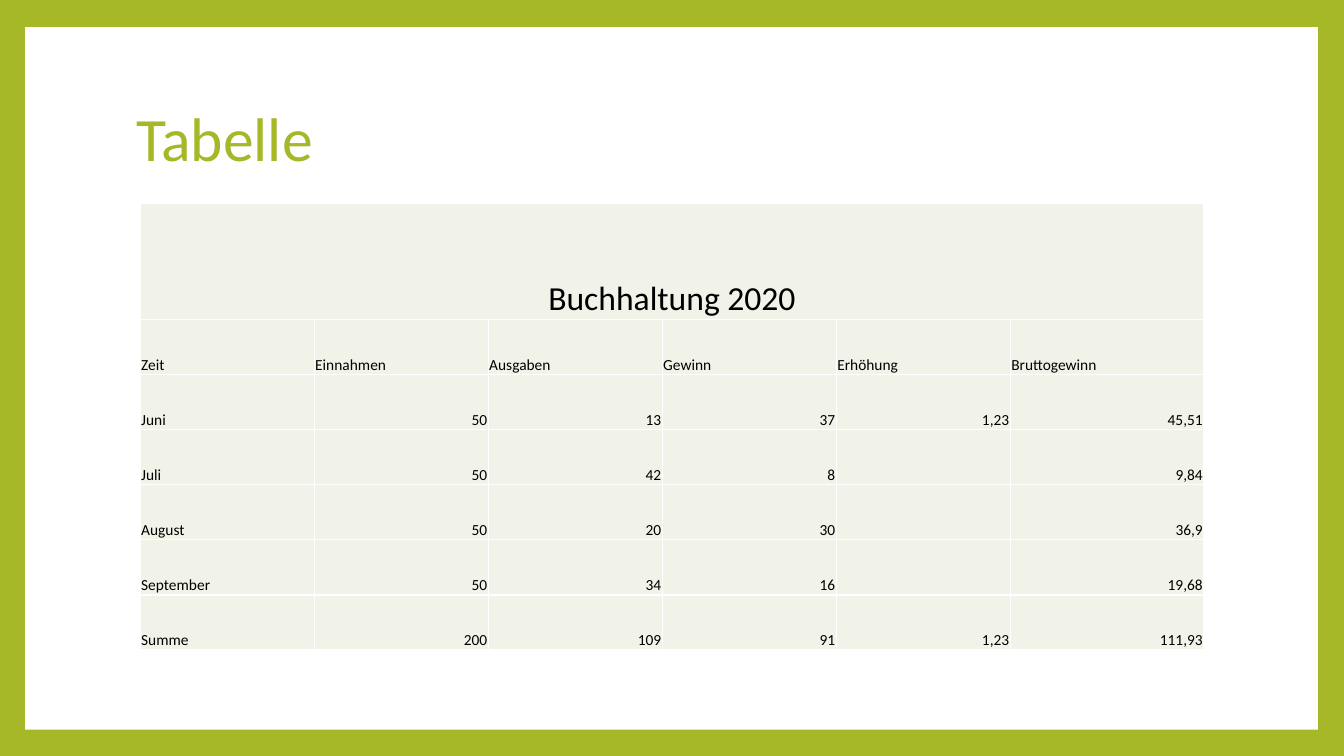
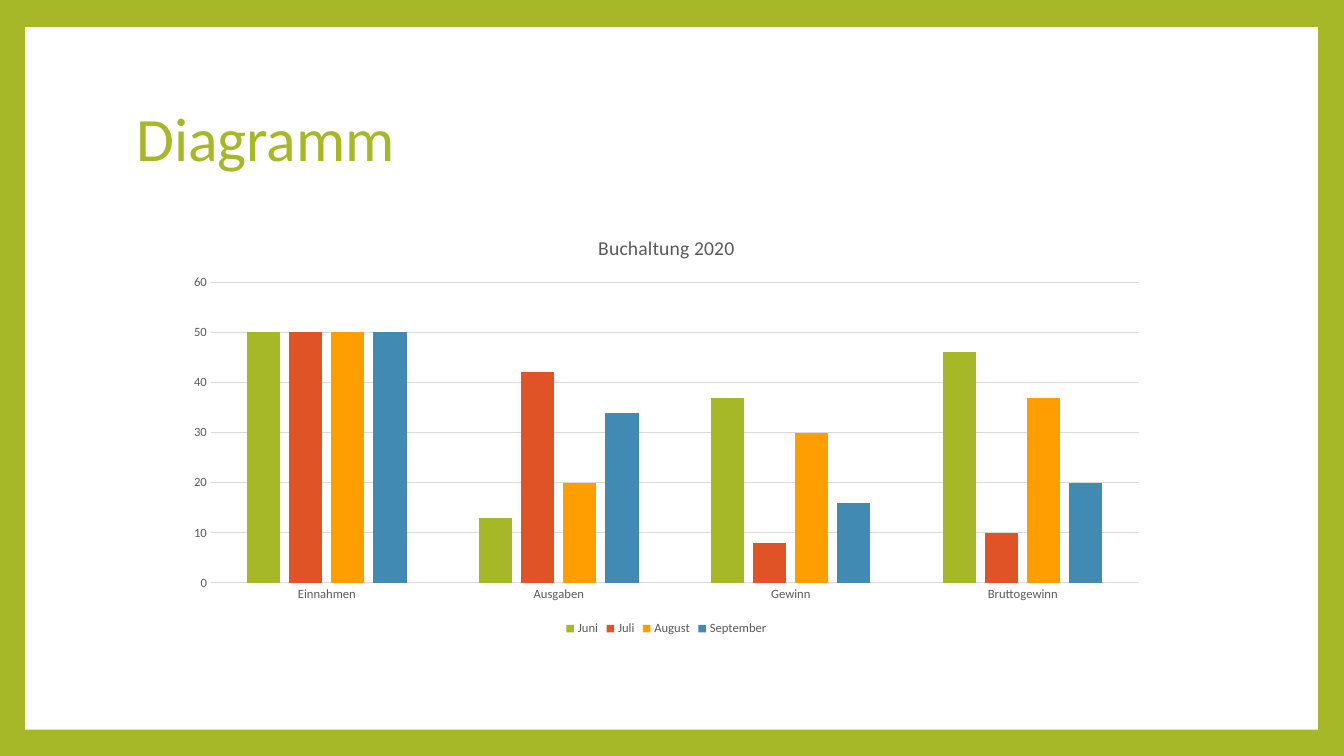
from dataclasses import dataclass
from typing import Any

from lxml import etree
from pptx import Presentation
from pptx import util as u
from pptx.chart import data as chart_data
from pptx.dml import color
from pptx.enum import chart as chart_enum
from pptx.enum import shapes, text
from pptx.oxml import ns

FONT = "Calibri"
GREEN, WHITE, BLACK = "A6B727", "FFFFFF", "000000"
CELL_FILL, GREY, GRID = "F1F3E8", "595959", "D9D9D9"
HEADING = "Buchhaltung 2020"
HEADERS = ["Zeit", "Einnahmen", "Ausgaben", "Gewinn", "Erhöhung", "Bruttogewinn"]
INCREASE = 1.23
LAST_COLUMN, FIRST_ROW = 1.92, 1.15


@dataclass(frozen=True)
class Place:
    left: float
    top: float
    width: float
    height: float

    def inches(self) -> list[u.Length]:
        return [u.Inches(v) for v in (self.left, self.top, self.width, self.height)]


@dataclass(frozen=True)
class Period:
    name: str
    income: int
    expenses: int
    color: str = ""
    shows_increase: bool = False

    @property
    def profit(self) -> int:
        return self.income - self.expenses

    @property
    def gross(self) -> float:
        return round(self.profit * INCREASE, 2)

    def row(self) -> list[str]:
        increase = german(INCREASE) if self.shows_increase else ""
        figures = [german(v) for v in (self.income, self.expenses, self.profit)]
        return [self.name, *figures, increase, german(self.gross)]


MONTHS = [
    Period("Juni", 50, 13, GREEN, True),
    Period("Juli", 50, 42, "DF5327"),
    Period("August", 50, 20, "FE9E00"),
    Period("September", 50, 34, "418AB3"),
]
TOTAL = Period(
    "Summe",
    sum(month.income for month in MONTHS),
    sum(month.expenses for month in MONTHS),
    shows_increase=True,
)
PANEL = Place(0.25, 0.27, 12.82, 6.97)
TITLE = Place(1.25, 0.66, 10.8, 1.48)
TABLE = Place(1.39, 2.02, 10.55, 4.43)
CHART = Place(1.73, 2.15, 9.76, 4.2)


def german(value: float) -> str:
    return f"{value:g}".replace(".", ",")


def rgb(value: str) -> color.RGBColor:
    return color.RGBColor.from_string(value)


def apply(target: Any, values: dict[str, Any]) -> None:
    for name, value in values.items():
        setattr(target, name, value)


def paint(fill: Any, value: str) -> None:
    fill.solid()
    fill.fore_color.rgb = rgb(value)


def style_font(font: Any, size: float, value: str) -> None:
    apply(font, {"name": FONT, "size": u.Pt(size), "bold": False})
    font.color.rgb = rgb(value)


def style_line(line: Any, value: str) -> None:
    paint(line.fill, value)
    line.width = u.Pt(0.75)


def write(frame: Any, words: str, size: float, value: str, align: Any) -> Any:
    para = frame.paragraphs[0]
    para.alignment = align
    if words:
        span = para.add_run()
        span.text = words
        style_font(span.font, size, value)
    return para


def add_panel(page: Any) -> None:
    panel = page.shapes.add_shape(shapes.MSO_SHAPE.RECTANGLE, *PANEL.inches())
    panel.shadow.inherit = False
    paint(panel.fill, WHITE)
    panel.line.fill.background()
    page.shapes.element.insert(2, panel.element)


def add_page(deck: Any, heading: str) -> Any:
    page = deck.slides.add_slide(deck.slide_layouts[5])
    paint(page.background.fill, GREEN)
    add_panel(page)
    title = page.shapes.title
    apply(title, dict(zip(("left", "top", "width", "height"), TITLE.inches())))
    frame = title.text_frame
    apply(frame, {
        "vertical_anchor": text.MSO_ANCHOR.MIDDLE,
        "auto_size": text.MSO_AUTO_SIZE.NONE,
        "word_wrap": True,
    })
    para = write(frame, heading, 44, GREEN, text.PP_ALIGN.LEFT)
    para.line_spacing = 0.9
    return page


def add_borders(table_frame: Any) -> None:
    for properties in table_frame.element.iter(ns.qn("a:tcPr")):
        for index, side in enumerate(("lnL", "lnR", "lnT", "lnB")):
            border = etree.Element(ns.qn(f"a:{side}"), w=str(u.Pt(1)))
            fill = etree.SubElement(border, ns.qn("a:solidFill"))
            etree.SubElement(fill, ns.qn("a:srgbClr"), val=WHITE)
            properties.insert(index, border)


def add_accounts_table(page: Any) -> None:
    rows = [[HEADING] + [""] * 5, HEADERS]
    rows += [period.row() for period in [*MONTHS, TOTAL]]
    table_frame = page.shapes.add_table(len(rows), len(HEADERS), *TABLE.inches())
    table = table_frame.table
    apply(table, {"first_row": False, "horz_banding": False})
    column_width = (TABLE.width - LAST_COLUMN) / (len(HEADERS) - 1)
    row_height = (TABLE.height - FIRST_ROW) / (len(rows) - 1)
    for index, column in enumerate(table.columns):
        column.width = u.Inches(LAST_COLUMN if index == 5 else column_width)
    for index, row in enumerate(table.rows):
        row.height = u.Inches(row_height if index else FIRST_ROW)
    for row_index, row in enumerate(rows):
        for column_index, words in enumerate(row):
            cell = table.cell(row_index, column_index)
            apply(cell, {
                "margin_left": u.Inches(0.01),
                "margin_right": u.Inches(0.01),
                "margin_top": u.Inches(0.01),
                "margin_bottom": 0,
                "vertical_anchor": text.MSO_ANCHOR.BOTTOM,
            })
            paint(cell.fill, CELL_FILL)
            if row_index == 0:
                align = text.PP_ALIGN.CENTER
            elif row_index > 1 and column_index:
                align = text.PP_ALIGN.RIGHT
            else:
                align = text.PP_ALIGN.LEFT
            size = 11 if row_index else 24
            write(cell.text_frame, words, size, BLACK, align)
    table.cell(0, 0).merge(table.cell(0, 5))
    add_borders(table_frame)


def add_accounts_chart(page: Any) -> None:
    figures = chart_data.CategoryChartData()
    figures.categories = [name for name in HEADERS[1:] if name != "Erhöhung"]
    for month in MONTHS:
        values = (month.income, month.expenses, month.profit, round(month.gross))
        figures.add_series(month.name, values)
    chart = page.shapes.add_chart(
        chart_enum.XL_CHART_TYPE.COLUMN_CLUSTERED, *CHART.inches(), figures
    ).chart
    style_font(chart.font, 10, BLACK)
    chart.has_title = True
    write(chart.chart_title.text_frame, "Buchaltung 2020", 14, GREY, text.PP_ALIGN.CENTER)
    chart.chart_title.include_in_layout = False

    plot = chart.plots[0]
    apply(plot, {"gap_width": 219, "overlap": -27, "vary_by_categories": False})
    for series, month in zip(plot.series, MONTHS):
        paint(series.format.fill, month.color)
        series.invert_if_negative = False

    for axis in (chart.category_axis, chart.value_axis):
        apply(axis, {
            "major_tick_mark": chart_enum.XL_TICK_MARK.NONE,
            "minor_tick_mark": chart_enum.XL_TICK_MARK.NONE,
        })
        style_font(axis.tick_labels.font, 9, GREY)
    style_line(chart.category_axis.format.line, GRID)
    value_axis = chart.value_axis
    apply(value_axis, {"minimum_scale": 0, "maximum_scale": 60, "major_unit": 10})
    value_axis.format.line.fill.background()
    style_line(value_axis.major_gridlines.format.line, GRID)

    chart.has_legend = True
    apply(chart.legend, {
        "position": chart_enum.XL_LEGEND_POSITION.BOTTOM,
        "include_in_layout": False,
    })
    style_font(chart.legend.font, 9, GREY)


def main() -> None:
    deck = Presentation()
    apply(deck, {"slide_width": u.Inches(13.33), "slide_height": u.Inches(7.5)})
    add_accounts_table(add_page(deck, "Tabelle"))
    add_accounts_chart(add_page(deck, "Diagramm"))
    deck.save("out.pptx")


if __name__ == "__main__":
    main()
